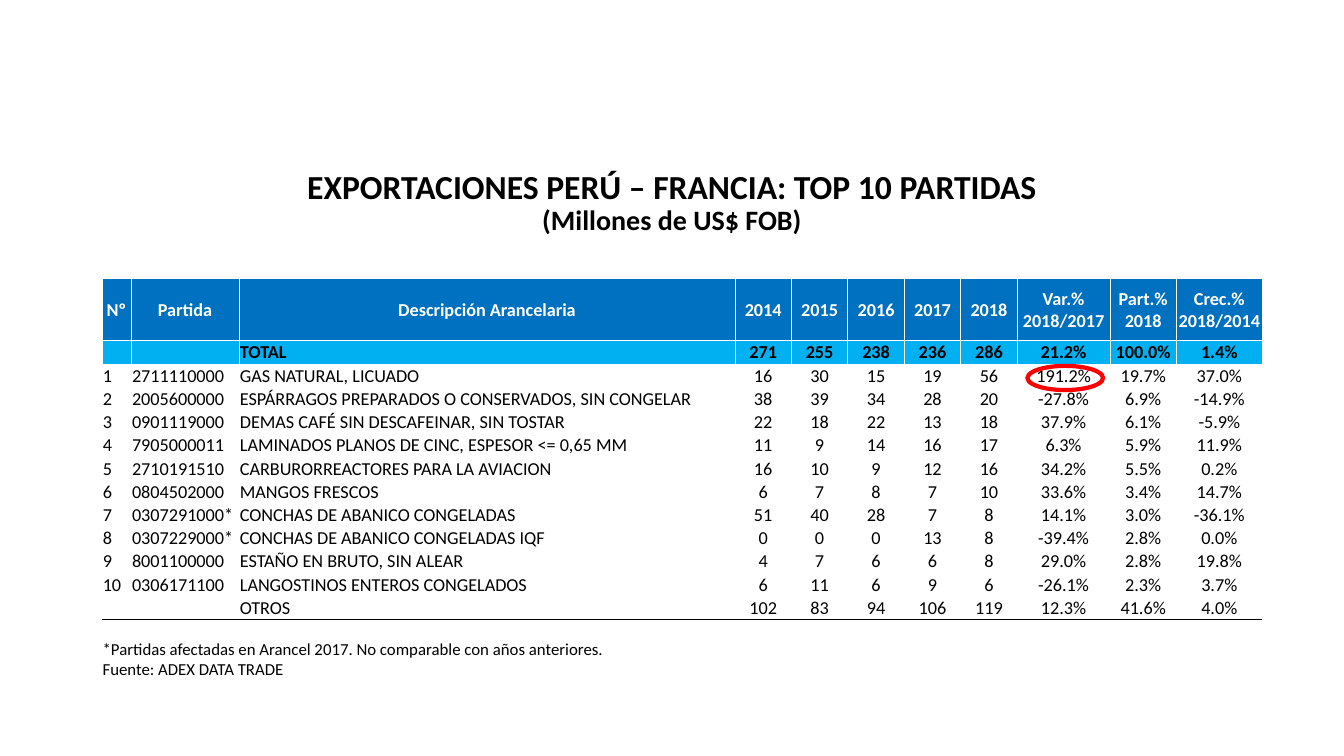
from lxml import etree
from pptx import Presentation
from pptx.dml.color import RGBColor
from pptx.enum.shapes import MSO_SHAPE
from pptx.enum.text import MSO_ANCHOR, PP_ALIGN
from pptx.oxml.ns import qn
from pptx.util import Inches, Pt

LEFT, CENTER = PP_ALIGN.LEFT, PP_ALIGN.CENTER
TOP, MIDDLE, BOTTOM = MSO_ANCHOR.TOP, MSO_ANCHOR.MIDDLE, MSO_ANCHOR.BOTTOM
OVAL = MSO_SHAPE.OVAL

COLORS = {
    "header": "0070C0",
    "total": "00B0F0",
    "text": "000000",
    "white": "FFFFFF",
    "highlight": "FF0000",
}
COLUMN_WIDTHS = [0.29, 1.07, 4.92] + [0.56] * 5 + [0.92, 0.66, 0.85]
HEADER_HEIGHT, ROW_HEIGHT = 0.62, 0.23
EXPORTS = [
    ["Nº", "Partida", "Descripción Arancelaria", "2014", "2015", "2016", "2017", "2018",
     "Var.% 2018/2017", "Part.% 2018", "Crec.% 2018/2014"],
    ["", "", "TOTAL", "271", "255", "238", "236", "286", "21.2%", "100.0%", "1.4%"],
    ["1", "2711110000", "GAS NATURAL, LICUADO",
     "16", "30", "15", "19", "56", "191.2%", "19.7%", "37.0%"],
    ["2", "2005600000", "ESPÁRRAGOS PREPARADOS O CONSERVADOS, SIN CONGELAR",
     "38", "39", "34", "28", "20", "-27.8%", "6.9%", "-14.9%"],
    ["3", "0901119000", "DEMAS CAFÉ SIN DESCAFEINAR, SIN TOSTAR",
     "22", "18", "22", "13", "18", "37.9%", "6.1%", "-5.9%"],
    ["4", "7905000011", "LAMINADOS PLANOS DE CINC, ESPESOR <= 0,65 MM",
     "11", "9", "14", "16", "17", "6.3%", "5.9%", "11.9%"],
    ["5", "2710191510", "CARBURORREACTORES PARA LA AVIACION",
     "16", "10", "9", "12", "16", "34.2%", "5.5%", "0.2%"],
    ["6", "0804502000", "MANGOS FRESCOS",
     "6", "7", "8", "7", "10", "33.6%", "3.4%", "14.7%"],
    ["7", "0307291000*", "CONCHAS DE ABANICO CONGELADAS",
     "51", "40", "28", "7", "8", "14.1%", "3.0%", "-36.1%"],
    ["8", "0307229000*", "CONCHAS DE ABANICO CONGELADAS IQF",
     "0", "0", "0", "13", "8", "-39.4%", "2.8%", "0.0%"],
    ["9", "8001100000", "ESTAÑO EN BRUTO, SIN ALEAR",
     "4", "7", "6", "6", "8", "29.0%", "2.8%", "19.8%"],
    ["10", "0306171100", "LANGOSTINOS ENTEROS CONGELADOS",
     "6", "11", "6", "9", "6", "-26.1%", "2.3%", "3.7%"],
    ["", "", "OTROS", "102", "83", "94", "106", "119", "12.3%", "41.6%", "4.0%"],
]


class SlideBuilder:
    font_name = "Calibri"
    table_size = 13

    def __init__(self, slide):
        self.slide = slide

    def color(self, name):
        return RGBColor.from_string(COLORS[name])

    def style_text(self, paragraph, text, size, color="text", bold=False, align=LEFT):
        paragraph.text = text
        paragraph.alignment = align
        for run in paragraph.runs:
            run.font.name = self.font_name
            run.font.size = Pt(size)
            run.font.bold = bold
            run.font.color.rgb = self.color(color)

    def text_box(self, left, top, width, height, lines, bold=False,
                 align=LEFT, anchor=TOP, spacing=None):
        box = self.slide.shapes.add_textbox(
            Inches(left), Inches(top), Inches(width), Inches(height))
        frame = box.text_frame
        frame.word_wrap = True
        frame.vertical_anchor = anchor
        frame.text = "\n".join(text for text, size in lines)
        for paragraph, (text, size) in zip(frame.paragraphs, lines):
            self.style_text(paragraph, text, size, bold=bold, align=align)
            paragraph.line_spacing = spacing

    def borders(self, cell, bottom):
        properties = cell._tc.get_or_add_tcPr()
        sides = {"lnL": "white", "lnR": "white", "lnT": "white", "lnB": bottom}
        for side, color in sides.items():
            line = etree.SubElement(properties, qn(f"a:{side}"), w=str(Pt(0.5)))
            fill = etree.SubElement(line, qn("a:solidFill"))
            etree.SubElement(fill, qn("a:srgbClr"), val=COLORS[color])

    def cell(self, cell, text, fill, color, bold, align, bottom):
        self.borders(cell, bottom)
        if fill:
            cell.fill.solid()
            cell.fill.fore_color.rgb = self.color(fill)
        else:
            cell.fill.background()
        cell.margin_left = cell.margin_right = cell.margin_top = Inches(0.01)
        cell.margin_bottom = 0
        cell.vertical_anchor = MIDDLE
        paragraph = cell.text_frame.paragraphs[0]
        self.style_text(paragraph, text, self.table_size, color, bold, align)
        if not text:
            etree.SubElement(paragraph._p, qn("a:endParaRPr"), sz=str(self.table_size * 100))

    def table(self, left, top, rows):
        heights = [HEADER_HEIGHT] + [ROW_HEIGHT] * (len(rows) - 1)
        table = self.slide.shapes.add_table(
            len(rows), len(COLUMN_WIDTHS), Inches(left), Inches(top),
            Inches(sum(COLUMN_WIDTHS)), Inches(sum(heights))).table
        table.horz_banding = False
        for column, width in zip(table.columns, COLUMN_WIDTHS):
            column.width = Inches(width)
        row_fills = {0: "header", 1: "total"}
        for r, values in enumerate(rows):
            table.rows[r].height = Inches(heights[r])
            bottom = "text" if r == len(rows) - 1 else "white"
            for c, value in enumerate(values):
                self.cell(table.cell(r, c), value, row_fills.get(r),
                          "white" if r == 0 else "text", r < 2,
                          CENTER if r == 0 or c > 2 else LEFT, bottom)

    def ring(self, left, top, width, height):
        ring = self.slide.shapes.add_shape(
            OVAL, Inches(left), Inches(top), Inches(width), Inches(height))
        ring.shadow.inherit = False
        ring.fill.background()
        ring.line.color.rgb = self.color("highlight")
        ring.line.width = Pt(3)


def main():
    deck = Presentation()
    deck.slide_width, deck.slide_height = Inches(13.33), Inches(7.5)
    builder = SlideBuilder(deck.slides.add_slide(deck.slide_layouts[6]))
    builder.table(1.01, 2.76, EXPORTS)
    builder.text_box(
        0, 1.59, 13.33, 0.81,
        [("EXPORTACIONES PERÚ – FRANCIA: TOP 10 PARTIDAS", 24), ("(Millones de US$ FOB)", 20)],
        bold=True, align=CENTER, anchor=BOTTOM, spacing=0.9)
    builder.text_box(
        0.92, 6.29, 6.14, 0.5,
        [("*Partidas afectadas en Arancel 2017. No comparable con años anteriores.", 12),
         ("Fuente: ADEX DATA TRADE", 12)])
    builder.ring(10.19, 3.63, 0.75, 0.24)
    deck.save("out.pptx")


if __name__ == "__main__":
    main()
